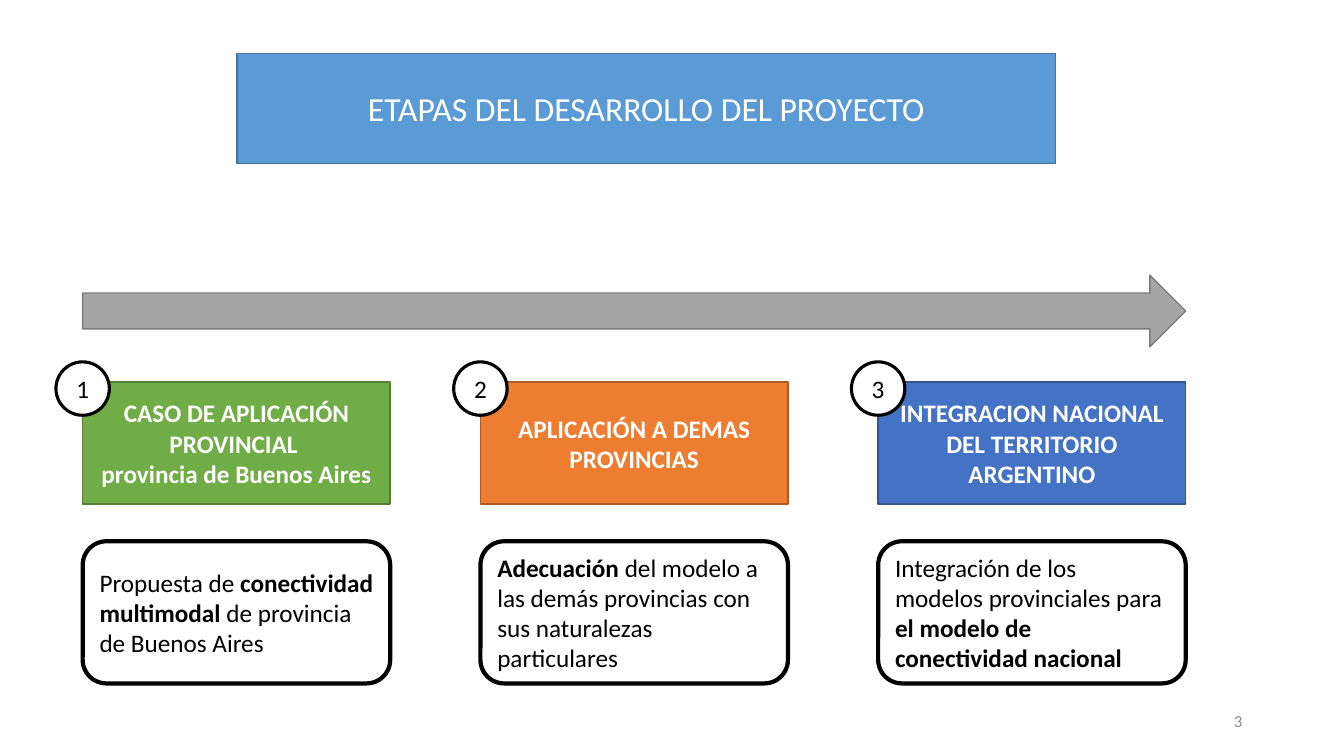
import dataclasses
import typing

import pptx
import pptx.dml.color
import pptx.enum.shapes
import pptx.enum.text
import pptx.oxml
import pptx.oxml.ns
import pptx.util

Inches = pptx.util.Inches
Pt = pptx.util.Pt
RGB = pptx.dml.color.RGBColor
Kind = pptx.enum.shapes.MSO_SHAPE
Align = pptx.enum.text.PP_ALIGN

WHITE = RGB(0xFF, 0xFF, 0xFF)
BLACK = RGB(0x00, 0x00, 0x00)
BLUE = RGB(0x5B, 0x9B, 0xD5)
BLUE_EDGE = RGB(0x43, 0x73, 0x9E)
GREEN = RGB(0x70, 0xAD, 0x47)
GREEN_EDGE = RGB(0x53, 0x80, 0x35)
ORANGE = RGB(0xED, 0x7D, 0x31)
ORANGE_EDGE = RGB(0xAF, 0x5C, 0x24)
INDIGO = RGB(0x44, 0x72, 0xC4)
INDIGO_EDGE = RGB(0x32, 0x54, 0x91)
GRAY = RGB(0xA5, 0xA5, 0xA5)
GRAY_EDGE = RGB(0x7A, 0x7A, 0x7A)
PAGE_GRAY = RGB(0x8C, 0x8C, 0x8C)

LEFT, SPAN, WIDE = 0.82, 10.94, 3.05
BADGE = 0.53

Line = list[tuple[str, bool]]
Box = tuple[float, float, float, float]


@dataclasses.dataclass
class Look:
    fill: RGB
    edge: RGB
    weight: float = 1


@dataclasses.dataclass
class Stage:
    look: Look
    head: list[Line]
    body: Line


CARD = Look(WHITE, BLACK, 3)
DISC = Look(WHITE, BLACK, 2.25)

STAGES = [
    Stage(Look(GREEN, GREEN_EDGE),
          [[("CASO DE APLICACIÓN PROVINCIAL ", True)],
           [("provincia de Buenos Aires", True)]],
          [("Propuesta de ", False), ("conectividad multimodal", True),
           (" de provincia de Buenos Aires", False)]),
    Stage(Look(ORANGE, ORANGE_EDGE),
          [[("APLICACIÓN A DEMAS PROVINCIAS", True)]],
          [("Adecuación", True),
           (" del modelo a las demás provincias con sus naturalezas particulares", False)]),
    Stage(Look(INDIGO, INDIGO_EDGE),
          [[("INTEGRACION NACIONAL DEL TERRITORIO ARGENTINO", True)]],
          [("Integración de los modelos provinciales para ", False),
           ("el modelo de conectividad nacional", True)]),
]


def apply(target: typing.Any, values: dict[str, typing.Any]) -> None:
    for name, value in values.items():
        setattr(target, name, value)


def paint(shape: typing.Any, look: Look) -> None:
    shape.fill.solid()
    shape.fill.fore_color.rgb = look.fill
    shape.line.color.rgb = look.edge
    shape.line.width = Pt(look.weight)


def write(shape: typing.Any, lines: list[Line], color: RGB,
          size: float = 18, align: Align = Align.CENTER) -> None:
    frame = shape.text_frame
    apply(frame, {"word_wrap": True,
                  "auto_size": pptx.enum.text.MSO_AUTO_SIZE.NONE,
                  "vertical_anchor": pptx.enum.text.MSO_ANCHOR.MIDDLE})
    for index, line in enumerate(lines):
        para = frame.add_paragraph() if index else frame.paragraphs[0]
        para.alignment = align
        for text, bold in line:
            run = para.add_run()
            run.text = text
            apply(run.font, {"name": "Calibri", "size": Pt(size), "bold": bold})
            run.font.color.rgb = color


def draw(slide: typing.Any, kind: Kind, box: Box, look: Look) -> typing.Any:
    shape = slide.shapes.add_shape(kind, *map(Inches, box))
    shape.shadow.inherit = False
    paint(shape, look)
    return shape


def add_title(slide: typing.Any) -> None:
    title = slide.shapes.title
    apply(title, {"left": Inches(2.35), "top": Inches(0.53),
                  "width": Inches(8.12), "height": Inches(1.09)})
    title.element.spPr.append(pptx.oxml.parse_xml(
        f'<a:prstGeom {pptx.oxml.ns.nsdecls("a")} prst="roundRect"><a:avLst/></a:prstGeom>'))
    paint(title, Look(BLUE, BLUE_EDGE))
    write(title, [[("ETAPAS DEL DESARROLLO DEL PROYECTO", False)]], WHITE, 24)


def add_stage(slide: typing.Any, index: int, stage: Stage) -> None:
    left = LEFT + index * (SPAN - WIDE) / (len(STAGES) - 1)
    head = draw(slide, Kind.RECTANGLE, (left, 3.79, WIDE, 1.21), stage.look)
    write(head, stage.head, WHITE)
    body = draw(slide, Kind.ROUNDED_RECTANGLE, (left, 5.37, WIDE, 1.41), CARD)
    write(body, [stage.body], BLACK, align=Align.LEFT)
    disc = draw(slide, Kind.OVAL, (left - BADGE / 2, 3.59, BADGE, BADGE), DISC)
    write(disc, [[(str(index + 1), False)]], BLACK)


def main() -> None:
    deck = pptx.Presentation()
    apply(deck, {"slide_width": Inches(13.33), "slide_height": Inches(7.5)})
    slide = deck.slides.add_slide(deck.slide_layouts.get_by_name("Title Only"))
    add_title(slide)
    draw(slide, Kind.RIGHT_ARROW, (LEFT, 2.73, SPAN, 0.71), Look(GRAY, GRAY_EDGE))
    for index, stage in enumerate(STAGES):
        add_stage(slide, index, stage)
    page = slide.shapes.add_textbox(*map(Inches, (9.42, 6.95, 3, 0.4)))
    write(page, [[("3", False)]], PAGE_GRAY, 12, Align.RIGHT)
    deck.save("out.pptx")


if __name__ == "__main__":
    main()
